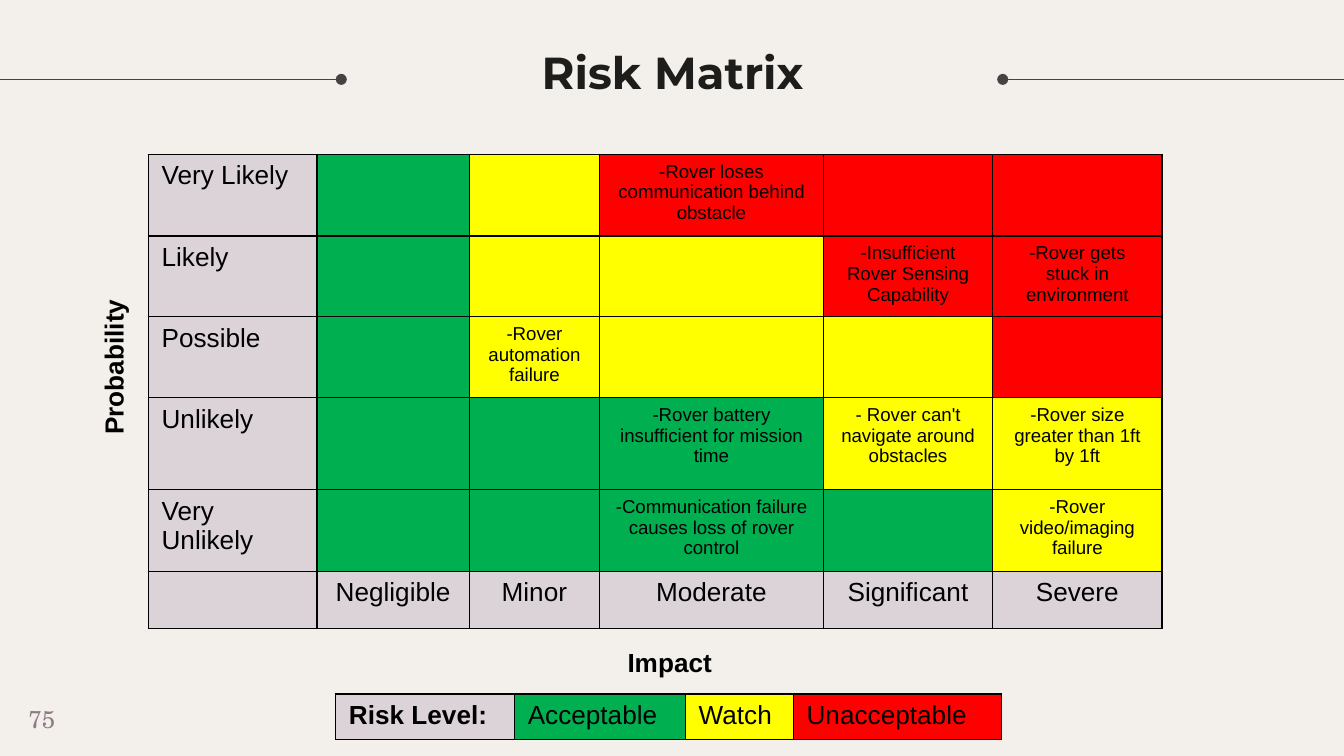
from dataclasses import dataclass

import pptx
import pptx.dml.color
import pptx.enum.shapes
import pptx.enum.text
import pptx.oxml
import pptx.oxml.ns
import pptx.util
from pptx.util import Cm

ALIGN = pptx.enum.text.PP_ALIGN
ANCHOR = pptx.enum.text.MSO_ANCHOR


@dataclass(frozen=True)
class Theme:
    background: str = "F3EFEA"
    title: str = "1D1D1B"
    rule: str = "434343"
    number: str = "8F7B87"
    ink: str = "000000"
    label: str = "DBD3D8"
    acceptable: str = "00B050"
    watch: str = "FFFF00"
    unacceptable: str = "FF0000"
    title_font: str = "Montserrat"
    number_font: str = "TeX Gyre Schola"
    body_font: str = "Arial"
    title_size: int = 24
    label_size: int = 14
    number_size: int = 13
    risk_size: int = 10
    line_width: float = 0.75


THEME = Theme()
LEVELS = {"L": THEME.label, "G": THEME.acceptable,
          "Y": THEME.watch, "R": THEME.unacceptable}

# Risk matrix: probability, level of each impact, risks by column
PROBABILITIES = [
    ("Very Likely", "GYRRR", {3: "-Rover loses communication behind obstacle"}),
    ("Likely", "GYYRR", {4: "-Insufficient Rover Sensing Capability",
                         5: "-Rover gets stuck in environment"}),
    ("Possible", "GYYYR", {2: "-Rover automation failure"}),
    ("Unlikely", "GGGYY", {3: "-Rover battery insufficient for mission time",
                           4: "- Rover can't navigate around obstacles",
                           5: "-Rover size greater than 1ft by 1ft"}),
    ("Very Unlikely", "GGGGY", {3: "-Communication failure causes loss of rover control",
                                5: "-Rover video/imaging failure"}),
]
IMPACTS = ["Negligible", "Minor", "Moderate", "Significant", "Severe"]


def color(code):
    return pptx.dml.color.RGBColor.from_string(code)


def write(frame, text, size=THEME.label_size, font=THEME.body_font,
          ink=THEME.ink, bold=False, align=ALIGN.LEFT):
    para = frame.paragraphs[0]
    para.alignment = align
    span = para.add_run()
    span.text = text
    span.font.size = pptx.util.Pt(size)
    span.font.name = font
    span.font.bold = bold
    span.font.color.rgb = color(ink)


def set_margins(frame, margin):
    frame.margin_left = frame.margin_right = margin
    frame.margin_top = frame.margin_bottom = margin


def add_title(slide, text):
    title = slide.shapes.title
    title.left, title.top, title.width, title.height = Cm(6.45), Cm(0.15), Cm(12.52), Cm(2.39)
    frame = title.text_frame
    frame.auto_size = pptx.enum.text.MSO_AUTO_SIZE.NONE
    frame.vertical_anchor = ANCHOR.MIDDLE
    set_margins(frame, Cm(0.25))
    write(frame, text, size=THEME.title_size, font=THEME.title_font,
          ink=THEME.title, bold=True, align=ALIGN.CENTER)


def add_rule(slide, start, end, top):
    rule = slide.shapes.add_connector(
        pptx.enum.shapes.MSO_CONNECTOR.STRAIGHT, start, top, end, top)
    rule.line.color.rgb = color(THEME.rule)
    rule.line.width = pptx.util.Pt(THEME.line_width)
    dot = pptx.oxml.parse_xml(f'<a:headEnd {pptx.oxml.ns.nsdecls("a")} type="oval"/>')
    rule.line._get_or_add_ln().append(dot)
    effects = pptx.oxml.parse_xml(f'<a:effectLst {pptx.oxml.ns.nsdecls("a")}/>')
    rule._element.spPr.append(effects)


def add_text(slide, left, top, width, height, text, rotation=0, margin=None, **style):
    box = slide.shapes.add_textbox(left, top, width, height)
    box.rotation = rotation
    frame = box.text_frame
    frame.word_wrap = True
    if margin is not None:
        set_margins(frame, margin)
    write(frame, text, **style)


def paint_cell(cell, fill):
    # Borders precede the fill in the cell properties
    properties = cell._tc.get_or_add_tcPr()
    width = pptx.util.Pt(THEME.line_width)
    for side in "LRTB":
        properties.append(pptx.oxml.parse_xml(
            f'<a:ln{side} {pptx.oxml.ns.nsdecls("a")} w="{width}"><a:solidFill>'
            f'<a:srgbClr val="{THEME.ink}"/></a:solidFill></a:ln{side}>'))
    cell.fill.solid()
    cell.fill.fore_color.rgb = color(fill)


def add_grid(slide, left, top, widths, heights, rows):
    """Add a table; each cell in rows is (fill, text, style)."""
    table = slide.shapes.add_table(len(heights), len(widths), left, top,
                                   sum(widths), sum(heights)).table
    table.first_row = table.horz_banding = False
    for column, width in zip(table.columns, widths):
        column.width = width
    for row, height, entries in zip(table.rows, heights, rows):
        row.height = height
        for cell, (fill, text, style) in zip(row.cells, entries):
            paint_cell(cell, fill)
            if text:
                write(cell.text_frame, text, **style)


def matrix_rows():
    risk_style = {"size": THEME.risk_size, "align": ALIGN.CENTER}
    rows = []
    for probability, levels, risks in PROBABILITIES:
        cells = [(LEVELS[level], risks.get(column), risk_style)
                 for column, level in enumerate(levels, start=1)]
        rows.append([(THEME.label, probability, {})] + cells)
    impacts = [(THEME.label, impact, {"align": ALIGN.CENTER}) for impact in IMPACTS]
    rows.append([(THEME.label, None, {})] + impacts)
    return rows


def main():
    deck = pptx.Presentation()
    deck.slide_width, deck.slide_height = Cm(25.4), Cm(14.29)
    slide = deck.slides.add_slide(deck.slide_layouts[5])
    slide.background.fill.solid()
    slide.background.fill.fore_color.rgb = color(THEME.background)

    # Heading between two dotted rules
    add_rule(slide, Cm(6.45), Cm(-0.08), Cm(1.5))
    add_rule(slide, Cm(18.95), Cm(25.43), Cm(1.5))
    add_title(slide, "Risk Matrix")

    # Slide number
    add_text(slide, Cm(0.03), Cm(13.06), Cm(1.52), Cm(1.09), "75", margin=Cm(0.25),
             size=THEME.number_size, font=THEME.number_font,
             ink=THEME.number, align=ALIGN.CENTER)

    # Matrix and its axis labels
    widths = [Cm(width) for width in (3.19, 2.88, 2.46, 4.23, 3.2, 3.2)]
    heights = [Cm(height) for height in (1.54, 1.09, 1.53, 1.74, 1.54, 1.09)]
    add_grid(slide, Cm(2.8), Cm(2.92), widths, heights, matrix_rows())
    add_text(slide, Cm(11.61), Cm(12.09), Cm(2.64), Cm(0.86), "Impact", bold=True)
    add_text(slide, Cm(0.46), Cm(6.35), Cm(3.38), Cm(0.86), "Probability",
             rotation=270, bold=True)

    # Legend
    legend = [(THEME.label, "Risk Level:", {"bold": True}),
              (THEME.acceptable, "Acceptable", {}),
              (THEME.watch, "Watch", {}),
              (THEME.unacceptable, "Unacceptable", {})]
    widths = [Cm(width) for width in (3.38, 3.23, 2.04, 3.93)]
    add_grid(slide, Cm(6.34), Cm(13.12), widths, [Cm(0.86)], [legend])

    deck.save("out.pptx")


if __name__ == "__main__":
    main()
